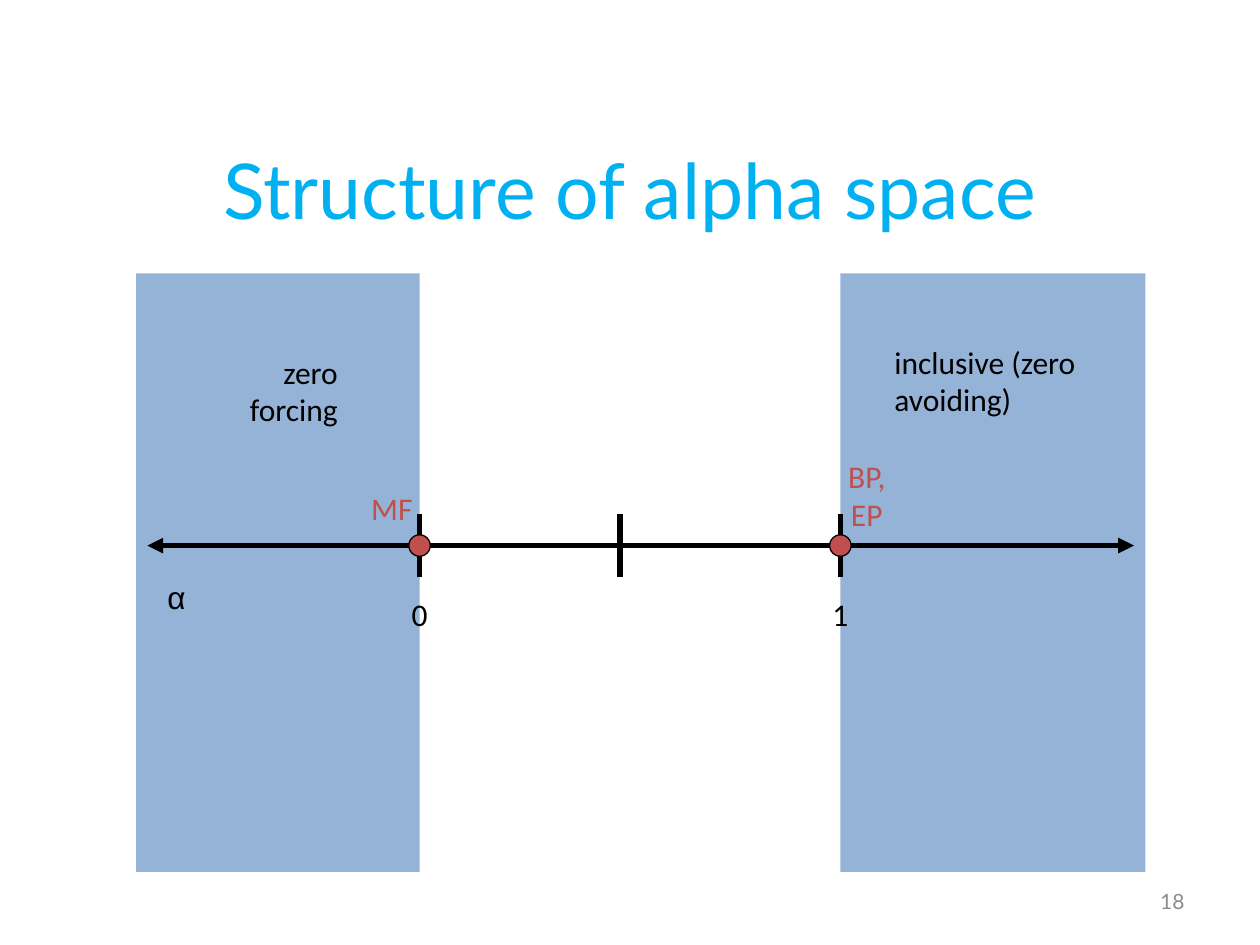
"""Build the slide on the structure of alpha space."""
from lxml.etree import SubElement
from pptx import Presentation
from pptx.dml.color import RGBColor
from pptx.enum.shapes import MSO_CONNECTOR, MSO_SHAPE
from pptx.enum.text import MSO_ANCHOR, PP_ALIGN as AL
from pptx.oxml.ns import qn
from pptx.util import Inches, Pt


def rgb(value):
    return RGBColor.from_string(value)


def add_text(text, x, y, w, h, size=18, font="Calibri", color="000000",
             align=AL.LEFT, anchor=MSO_ANCHOR.TOP, wrap=False):
    tb = s.shapes.add_textbox(Inches(x), Inches(y), Inches(w), Inches(h))
    tf = tb.text_frame
    tf.word_wrap = wrap
    tf.vertical_anchor = anchor
    tf.text = text
    for p in tf.paragraphs:
        p.alignment = align
        for r in p.runs:
            r.font.size = Pt(size)
            r.font.name = font
            r.font.color.rgb = rgb(color)


prs = Presentation()
prs.slide_width, prs.slide_height = Inches(10), Inches(7.5)
s = prs.slides.add_slide(prs.slide_layouts[6])

zero, half, one = 3.33, 4.92, 6.67
axis_y, tick, dot = 4.33, 0.25, 0.17

for x, w in [(one, 2.42), (1.08, 2.25)]:
    sp = s.shapes.add_shape(MSO_SHAPE.RECTANGLE, Inches(x), Inches(2.17), Inches(w), Inches(4.75))
    sp.shadow.inherit = False
    sp.fill.solid()
    sp.fill.fore_color.rgb = rgb("95B3D7")
    sp.line.fill.background()

add_text("Structure of alpha space", 0.5, 0.87, 9, 1.25, 44, "Lato", "00B0F0",
         AL.CENTER, MSO_ANCHOR.MIDDLE, True)
add_text("18", 7.17, 6.95, 2.33, 0.4, 12, "Lato", "8C8C8C", AL.RIGHT, MSO_ANCHOR.MIDDLE, True)

lines = [(1.17, axis_y, 9, axis_y)]
lines += [(x, axis_y - tick, x, axis_y + tick) for x in (zero, half, one)]
for x1, y1, x2, y2 in lines:
    cn = s.shapes.add_connector(MSO_CONNECTOR.STRAIGHT, Inches(x1), Inches(y1), Inches(x2), Inches(y2))
    cn.line.color.rgb = rgb("000000")
    cn.line.width = Pt(3)
    if y1 == y2:
        for end in ("a:headEnd", "a:tailEnd"):
            SubElement(cn.line._get_or_add_ln(), qn(end), type="triangle")
    SubElement(cn._element.spPr, qn("a:effectLst"))

for x in (zero, one):
    sp = s.shapes.add_shape(MSO_SHAPE.OVAL, Inches(x - dot / 2), Inches(axis_y - dot / 2),
                            Inches(dot), Inches(dot))
    sp.shadow.inherit = False
    sp.fill.solid()
    sp.fill.fore_color.rgb = rgb("C0504D")
    sp.line.color.rgb = rgb("000000")
    sp.line.width = Pt(0.75)

add_text("α", 1.23, 4.54, 0.36, 0.4, font="Arial")
for label, x in [("0", zero), ("1", one)]:
    add_text(label, x - 0.17, 4.67, 0.34, 0.4, align=AL.CENTER)
add_text("zero\nforcing", 1.83, 2.75, 0.95, 0.7, align=AL.RIGHT)
add_text("inclusive (zero\navoiding)", 7, 2.67, 1.8, 0.7)
add_text("MF", 2.83, 3.83, 0.56, 0.4, color="C0504D", align=AL.CENTER)
add_text("BP,\nEP", 6.58, 3.58, 0.6, 0.7, color="C0504D", align=AL.CENTER)

prs.save("out.pptx")
